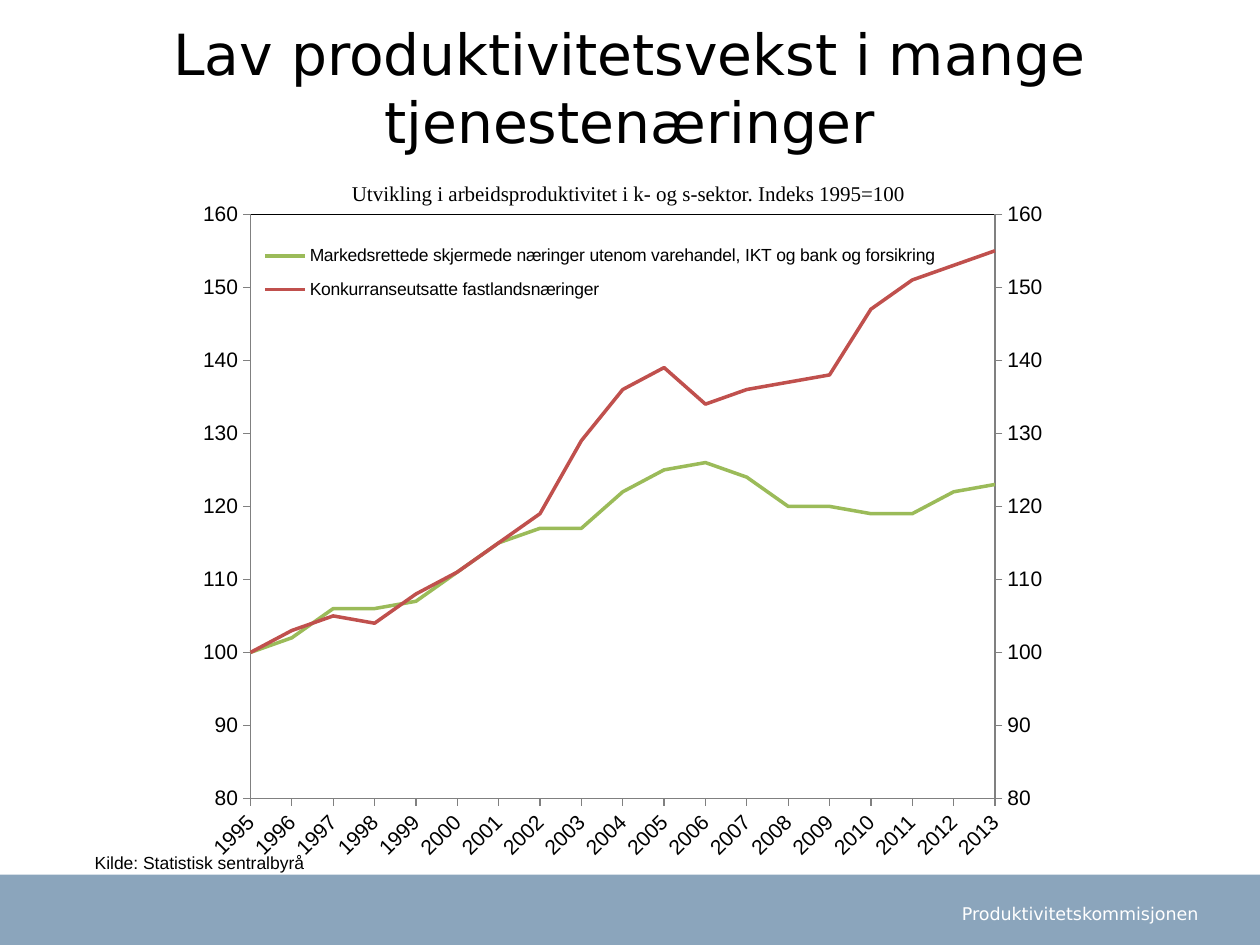
from copy import deepcopy
from dataclasses import dataclass

from pptx import Presentation
from pptx.chart.data import CategoryChartData
from pptx.dml.color import RGBColor
from pptx.enum.chart import XL_CHART_TYPE, XL_LEGEND_POSITION, XL_MARKER_STYLE, XL_TICK_MARK
from pptx.enum.shapes import MSO_SHAPE
from pptx.enum.text import MSO_ANCHOR, MSO_AUTO_SIZE, PP_ALIGN
from pptx.oxml import parse_xml
from pptx.oxml.ns import nsdecls
from pptx.util import Cm, Pt

LEFT, CENTER, RIGHT = PP_ALIGN.LEFT, PP_ALIGN.CENTER, PP_ALIGN.RIGHT
TOP, MIDDLE, BOTTOM = MSO_ANCHOR.TOP, MSO_ANCHOR.MIDDLE, MSO_ANCHOR.BOTTOM
BLACK, WHITE, GRAY, BAND_BLUE = "000000", "FFFFFF", "808080", "8BA5BC"


@dataclass
class Box:
    left: float
    top: float
    width: float
    height: float

    def lengths(self):
        return Cm(self.left), Cm(self.top), Cm(self.width), Cm(self.height)


@dataclass
class Label:
    text: str
    box: Box
    size: float
    font: str
    color: str = BLACK
    align: PP_ALIGN = LEFT
    anchor: MSO_ANCHOR = TOP
    wrap: bool = True


@dataclass
class Line:
    name: str
    color: str
    values: list


# Plot and legend are measured from the chart's top left corner
CHART_BOX = Box(3.12, 3.94, 19.15, 13.56)
PLOT_BOX = Box(1.93, 0.38, 15.01, 11.78)
LEGEND_BOX = Box(1.7, 0.74, 14.55, 1.63)

TITLE = Label("Lav produktivitetsvekst i mange tjenestenæringer",
              Box(1.27, 0.07, 22.86, 3.18), 32.4, "DejaVu Sans", align=CENTER, anchor=BOTTOM)
LABELS = [
    Label("Produktivitetskommisjonen", Box(17.91, 18.08, 6.5, 0.69), 10,
          "DejaVu Sans", WHITE, RIGHT, MIDDLE),
    Label("Utvikling i arbeidsproduktivitet i k- og s-sektor. Indeks 1995=100",
          Box(2.35, 3.51, 20.65, 0.76), 12, "Times New Roman", align=CENTER),
    Label("Kilde: Statistisk sentralbyrå", Box(1.66, 17.06, 4.78, 0.69), 10,
          "Arial", wrap=False),
]
YEARS = [str(year) for year in range(1995, 2014)]
LINES = [
    Line("Markedsrettede skjermede næringer utenom varehandel, IKT og bank og forsikring",
         "9BBB59", [100, 102, 106, 106, 107, 111, 115, 117, 117, 122,
                    125, 126, 124, 120, 120, 119, 119, 122, 123]),
    Line("Konkurranseutsatte fastlandsnæringer",
         "C0504D", [100, 103, 105, 104, 108, 111, 115, 119, 129, 136,
                    139, 134, 136, 137, 138, 147, 151, 153, 155]),
]


def rgb(color: str) -> RGBColor:
    return RGBColor.from_string(color)


def set_font(font, size: float, name: str, color: str) -> None:
    font.size, font.name = Pt(size), name
    font.color.rgb = rgb(color)


def fill_text(shape, label: Label) -> None:
    frame = shape.text_frame
    frame.text = label.text
    frame.word_wrap = label.wrap
    frame.auto_size = MSO_AUTO_SIZE.NONE
    frame.vertical_anchor = label.anchor
    paragraph = frame.paragraphs[0]
    paragraph.alignment = label.align
    set_font(paragraph.font, label.size, label.font, label.color)


def manual_layout(box: Box, inner: bool = False):
    """Express a box as fractions of the chart."""
    target = '<c:layoutTarget val="inner"/>' if inner else ""
    return parse_xml(
        f'<c:layout {nsdecls("c")}><c:manualLayout>{target}'
        f'<c:xMode val="edge"/><c:yMode val="edge"/>'
        f'<c:x val="{box.left / CHART_BOX.width:.4f}"/>'
        f'<c:y val="{box.top / CHART_BOX.height:.4f}"/>'
        f'<c:w val="{box.width / CHART_BOX.width:.4f}"/>'
        f'<c:h val="{box.height / CHART_BOX.height:.4f}"/></c:manualLayout></c:layout>')


def format_axes(chart) -> None:
    for axis in (chart.category_axis, chart.value_axis):
        axis.has_major_gridlines = False
        axis.major_tick_mark = XL_TICK_MARK.OUTSIDE
        axis.format.line.color.rgb = rgb(GRAY)
        axis.format.line.width = Pt(0.75)
        set_font(axis.tick_labels.font, 12, "Arial", BLACK)
    values = chart.value_axis
    values.minimum_scale, values.maximum_scale, values.major_unit = 80, 160, 10
    values.tick_labels.number_format = "0"
    values.tick_labels.number_format_is_linked = False
    # Slanted years, and lines that start on the axis itself
    body = chart.element.xpath(".//c:catAx/c:txPr/a:bodyPr")[0]
    body.set("rot", "-2700000")
    body.set("vert", "horz")
    for old in chart.element.xpath(".//c:valAx/c:crossBetween"):
        old.getparent().remove(old)
    chart.element.xpath(".//c:valAx/c:crosses")[0].addnext(
        parse_xml(f'<c:crossBetween {nsdecls("c")} val="midCat"/>'))


def add_right_axis(chart) -> None:
    """Move the last series to a second line group with its own value axis."""
    plot_area = chart.element.xpath(".//c:plotArea")[0]
    group = plot_area.xpath("c:lineChart")[0]
    category_axis = plot_area.xpath("c:catAx")[0]
    value_axis = plot_area.xpath("c:valAx")[0]
    right_group, right_categories, right_values = (
        deepcopy(part) for part in (group, category_axis, value_axis))
    group.remove(group.xpath("c:ser")[-1])
    for series in right_group.xpath("c:ser")[:-1]:
        right_group.remove(series)
    for part in (right_group, right_categories, right_values):
        for identifier in part.xpath("c:axId | c:crossAx"):
            identifier.set("val", str(abs(int(identifier.get("val"))) + 1))
    right_categories.xpath("c:delete")[0].set("val", "1")
    right_values.xpath("c:axPos")[0].set("val", "r")
    right_values.xpath("c:crosses")[0].set("val", "max")
    group.addnext(right_group)
    value_axis.addnext(right_values)
    right_values.addnext(right_categories)


def add_productivity_chart(slide) -> None:
    data = CategoryChartData()
    data.categories = YEARS
    for line in LINES:
        data.add_series(line.name, line.values)
    chart = slide.shapes.add_chart(XL_CHART_TYPE.LINE, *CHART_BOX.lengths(), data).chart
    chart.has_title = False
    set_font(chart.font, 8, "Arial", BLACK)
    chart.plots[0].vary_by_categories = False
    for series, line in zip(chart.plots[0].series, LINES):
        series.smooth = False
        series.marker.style = XL_MARKER_STYLE.NONE
        series.format.line.color.rgb = rgb(line.color)
        series.format.line.width = Pt(2)
    format_axes(chart)
    add_right_axis(chart)

    # Legend inside the plot
    chart.has_legend = True
    chart.legend.position = XL_LEGEND_POSITION.TOP
    chart.legend.include_in_layout = False
    set_font(chart.legend.font, 10, "Arial", BLACK)
    legend = chart.element.xpath(".//c:legend")[0]
    for old in legend.xpath("c:layout"):
        legend.remove(old)
    legend.xpath("c:legendPos")[0].addnext(manual_layout(LEGEND_BOX))

    # Plot position and frame
    plot_area = chart.element.xpath(".//c:plotArea")[0]
    for old in plot_area.xpath("c:layout | c:spPr"):
        plot_area.remove(old)
    plot_area.insert(0, manual_layout(PLOT_BOX, inner=True))
    plot_area.append(parse_xml(
        f'<c:spPr {nsdecls("c", "a")}><a:noFill/><a:ln w="9525"><a:solidFill>'
        f'<a:srgbClr val="{BLACK}"/></a:solidFill></a:ln></c:spPr>'))


def main() -> None:
    presentation = Presentation()
    presentation.slide_width, presentation.slide_height = Cm(25.4), Cm(19.05)
    slide = presentation.slides.add_slide(presentation.slide_layouts[5])

    # Title
    title = slide.shapes.title
    title.left, title.top, title.width, title.height = TITLE.box.lengths()
    fill_text(title, TITLE)

    # Footer band
    band = slide.shapes.add_shape(MSO_SHAPE.RECTANGLE, *Box(0, 17.63, 25.4, 1.5).lengths())
    band.shadow.inherit = False
    band.fill.solid()
    band.fill.fore_color.rgb = rgb(BAND_BLUE)
    band.line.fill.background()

    # Chart, then its heading, source and the footer text
    add_productivity_chart(slide)
    for label in LABELS:
        fill_text(slide.shapes.add_textbox(*label.box.lengths()), label)

    presentation.save("out.pptx")


if __name__ == "__main__":
    main()
